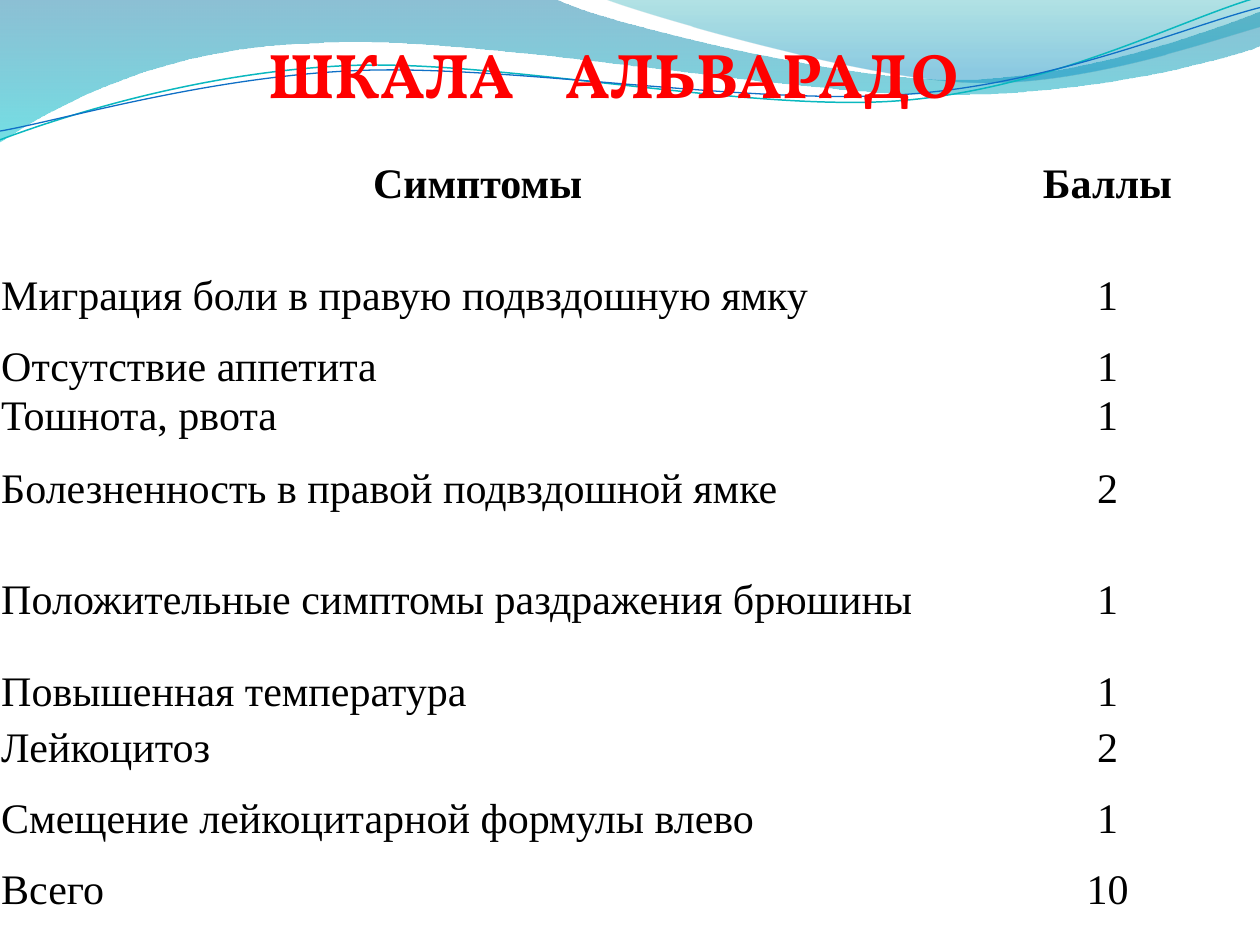
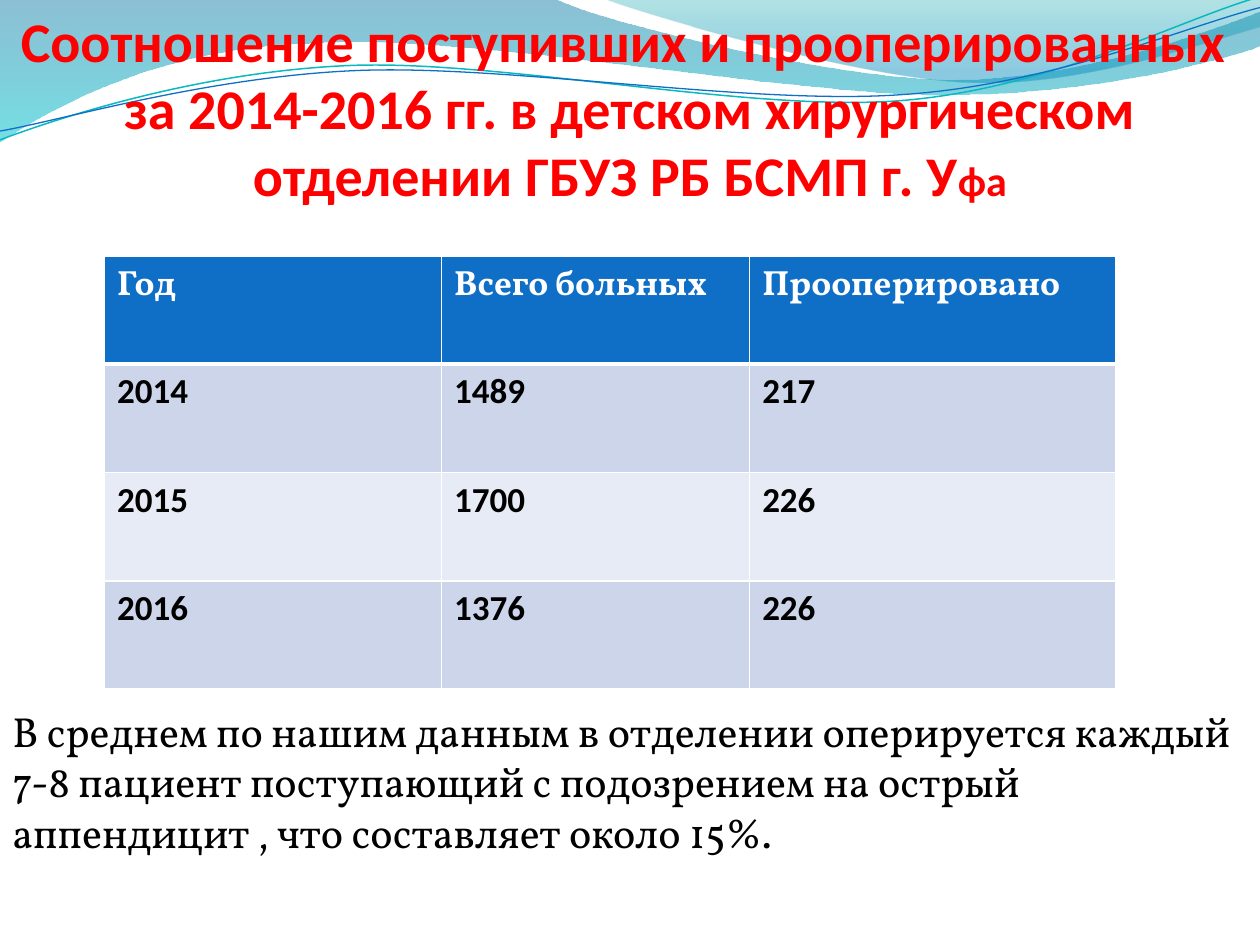
import math
from dataclasses import dataclass
from typing import Optional

import lxml.etree
import pptx
import pptx.dml.color
import pptx.enum.text
import pptx.oxml.ns
import pptx.shapes.autoshape
import pptx.slide
import pptx.table
import pptx.text.text
import pptx.util

# The slide is a grid of 100 columns by 75 rows with square cells
COLUMNS, ROWS = 100, 75
CELL = pptx.util.Inches(0.1)
NO_TABLE_STYLE = "{2D5ABB26-0587-4C30-8999-92F81FD0307C}"

CENTER = pptx.enum.text.PP_ALIGN.CENTER
LEFT = pptx.enum.text.PP_ALIGN.LEFT
TOP = pptx.enum.text.MSO_ANCHOR.TOP
MIDDLE = pptx.enum.text.MSO_ANCHOR.MIDDLE

Point = tuple[float, float]
Segment = tuple[Point, ...]  # one point: a line; three points: a Bezier curve


@dataclass(frozen=True)
class TextStyle:
    font: str
    size: float
    color: str
    bold: bool = False


@dataclass(frozen=True)
class Theme:
    white: str = "FFFFFF"
    blue: str = "0F6FC6"
    teal: str = "0AB8BF"
    bands: tuple[str, str] = ("CCD5EA", "E7EBF5")
    small_size: float = 24
    scale_title: TextStyle = TextStyle("Vollkorn", 36, "FF0000", True)
    ratio_title: TextStyle = TextStyle("Calibri", 32, "FF0000", True)
    body: TextStyle = TextStyle("Vollkorn", 24, "000000")
    scale_head: TextStyle = TextStyle("Times New Roman", 24, "000000", True)
    scale_cell: TextStyle = TextStyle("Times New Roman", 24, "000000")
    ratio_head: TextStyle = TextStyle("Vollkorn", 20, "FFFFFF", True)
    ratio_cell: TextStyle = TextStyle("Calibri", 20, "000000", True)


THEME = Theme()


@dataclass(frozen=True)
class Stop:
    position: float
    color: str
    opacity: int


@dataclass(frozen=True)
class Wave:
    start: Point
    segments: tuple[Segment, ...]
    stops: tuple[Stop, ...] = ()
    line_color: str = ""
    line_width: float = 0
    tilt: float = 0  # clockwise degrees about the pivot
    pivot: Point = (0, 0)


@dataclass(frozen=True)
class Area:
    left: float
    top: float
    width: float
    height: float

    def lengths(self) -> list[int]:
        return [grid(v) for v in (self.left, self.top, self.width, self.height)]


@dataclass(frozen=True)
class TableLook:
    area: Area
    columns: tuple[float, ...]
    rows: tuple[float, ...]
    head: TextStyle
    cell: TextStyle
    margins: Optional[float] = None
    anchor: pptx.enum.text.MSO_ANCHOR = TOP
    centered_head: bool = False
    centered_columns: tuple[int, ...] = ()
    head_fill: str = ""
    band_fills: tuple[str, ...] = ()
    border: str = ""


# Decorative waves at the top of every slide
WAVES = (
    Wave((0, 0), (
        ((44, -0.1),),
        ((47.6, 1.7), (66.4, 6.3), (75.8, 6.3)),
        ((85.3, 6.3), (95.8, 2.6), (100, 0.9)),
        ((100.1, 3.6),),
        ((98.3, 4.4), (87, 7.6), (74.6, 7.5)),
        ((62.2, 7.5), (38.2, 2.8), (25.7, 3.4)),
        ((12.9, 3.6), (4.6, 8.3), (-0.1, 11.3)),
    ), stops=(Stop(0, "0074A1", 45), Stop(1, "00C6CF", 55))),
    Wave((47.9, -0.1), (
        ((50.9, 1.1), (68.2, 6.2), (76.9, 6.5)),
        ((85.6, 6.9), (96.1, 3.2), (100, 2.1)),
        ((100, 0),),
    ), stops=(Stop(0, "00A1A9", 30), Stop(0.8, "008BBF", 45))),
    Wave((0, 11.1), (
        ((4.8, 9.3), (15.8, 5.7), (27.7, 5.2)),
        ((39.5, 4.7), (59.3, 8.9), (71.3, 8)),
        ((83.3, 7.1), (93.8, 1.5), (99.8, -0.2)),
    ), line_color=THEME.teal, line_width=0.85, tilt=-2.7, pivot=(49.9, 5.75)),
    Wave((0, 10.4), (
        ((4.7, 9.6), (16.4, 6.1), (28.3, 5.6)),
        ((40.3, 5.1), (59.7, 8.4), (71.7, 7.5)),
        ((83.6, 6.7), (94.1, 2.1), (100, 0.6)),
    ), line_color=THEME.blue, line_width=0.75, tilt=-2.7, pivot=(49.95, 5.9)),
)

# Table contents
SCALE_ROWS = (
    ("Симптомы", "Баллы"),
    ("Миграция боли в правую подвздошную ямку", "1"),
    ("Отсутствие аппетита", "1"),
    ("Тошнота, рвота", "1"),
    ("Болезненность в правой подвздошной ямке", "2"),
    ("Положительные симптомы раздражения брюшины", "1"),
    ("Повышенная температура", "1"),
    ("Лейкоцитоз", "2"),
    ("Смещение лейкоцитарной формулы влево", "1"),
    ("Всего", "10"),
)
RATIO_ROWS = (
    ("Год", "Всего больных", "Прооперировано"),
    ("2014", "1489", "217"),
    ("2015", "1700", "226"),
    ("2016", "1376", "226"),
)
SCALE_LOOK = TableLook(
    Area(0, 9.4, COLUMNS, 64.4), (75.8, 24.2),
    (10.4, 7.4, 3.6, 3.6, 7.8, 9.74, 4.92, 3.6, 7.4, 3.6),
    THEME.scale_head, THEME.scale_cell, margins=0.1, anchor=MIDDLE,
    centered_head=True, centered_columns=(1,))
RATIO_LOOK = TableLook(
    Area(8.3, 20.3, 80.25, 34.4), (26.75, 24.45, 29.05), (8.6,) * len(RATIO_ROWS),
    THEME.ratio_head, THEME.ratio_cell,
    head_fill=THEME.blue, band_fills=THEME.bands, border=THEME.white)


def grid(cells: float) -> int:
    return round(cells * CELL)


def rgb(color: str) -> pptx.dml.color.RGBColor:
    return pptx.dml.color.RGBColor.from_string(color)


def add_child(parent, tag: str, **attributes: str):
    return lxml.etree.SubElement(parent, pptx.oxml.ns.qn(tag), attributes)


def style_paragraph(paragraph: pptx.text.text._Paragraph, style: TextStyle,
                    alignment: pptx.enum.text.PP_ALIGN = LEFT) -> None:
    paragraph.alignment = alignment
    font = paragraph.font
    font.name, font.bold = style.font, style.bold
    font.size = pptx.util.Pt(style.size)
    font.color.rgb = rgb(style.color)


# Waves
def level(point: Point, wave: Wave) -> tuple[int, int]:
    """Turn a point back by the tilt, which the shape's rotation then restores."""
    angle = math.radians(-wave.tilt)
    x, y = point[0] - wave.pivot[0], point[1] - wave.pivot[1]
    return (grid(wave.pivot[0] + x * math.cos(angle) - y * math.sin(angle)),
            grid(wave.pivot[1] + x * math.sin(angle) + y * math.cos(angle)))


def bend(shape: pptx.shapes.autoshape.Shape, segments: tuple[Segment, ...]) -> None:
    """Join the straight steps of each three-point segment into one Bezier curve."""
    steps = iter(list(shape.element.iter(pptx.oxml.ns.qn("a:lnTo"))))
    for segment in segments:
        group = [next(steps) for _ in segment]
        if len(group) == 1:
            continue
        outline = group[0].getparent()
        curve = add_child(outline, "a:cubicBezTo")
        outline.replace(group[0], curve)
        for step in group:
            curve.append(step[0])
        for step in group[1:]:
            outline.remove(step)


def fill_gradient(shape: pptx.shapes.autoshape.Shape, stops: tuple[Stop, ...]) -> None:
    shape.fill.gradient()
    shape.fill.gradient_angle = 270
    for target, stop in zip(shape.fill.gradient_stops, stops):
        target.position = stop.position
        target.color.rgb = rgb(stop.color)
    colors = shape.element.iter(pptx.oxml.ns.qn("a:srgbClr"))
    for color, stop in zip(list(colors), stops):
        add_child(color, "a:alpha", val=str(stop.opacity * 1000))


def draw_wave(page: pptx.slide.Slide, wave: Wave) -> None:
    builder = page.shapes.build_freeform(*level(wave.start, wave))
    corners = [level(point, wave) for segment in wave.segments for point in segment]
    builder.add_line_segments(corners, close=bool(wave.stops))
    shape = builder.convert_to_shape()
    bend(shape, wave.segments)
    shape.rotation = wave.tilt
    shape.shadow.inherit = False
    if wave.stops:
        fill_gradient(shape, wave.stops)
        shape.line.fill.background()
    else:
        shape.fill.background()
        shape.line.color.rgb = rgb(wave.line_color)
        shape.line.width = pptx.util.Pt(wave.line_width)


def add_page(deck) -> pptx.slide.Slide:
    page = deck.slides.add_slide(deck.slide_layouts[6])
    for wave in WAVES:
        draw_wave(page, wave)
    return page


# Text boxes
def draw_text(page: pptx.slide.Slide, area: Area, lines: tuple[str, ...], style: TextStyle,
              alignment: pptx.enum.text.PP_ALIGN = LEFT) -> pptx.text.text.TextFrame:
    frame = page.shapes.add_textbox(*area.lengths()).text_frame
    frame.word_wrap = True
    frame.text = "\n".join(lines)
    for paragraph in frame.paragraphs:
        style_paragraph(paragraph, style, alignment)
    return frame


# Tables
def draw_borders(cell: pptx.table._Cell, color: str, row: int) -> None:
    heavy_side = {0: "B", 1: "T"}.get(row)
    properties = cell._tc.get_or_add_tcPr()
    for index, side in enumerate("LRTB"):
        width = pptx.util.Pt(3 if side == heavy_side else 1)
        line = add_child(properties, f"a:ln{side}", w=str(width))
        add_child(add_child(line, "a:solidFill"), "a:srgbClr", val=color)
        properties.insert(index, line)


def draw_cell(cell: pptx.table._Cell, text: str, row: int, column: int, look: TableLook) -> None:
    cell.text = text
    cell.vertical_anchor = look.anchor
    if look.margins is not None:
        margin = grid(look.margins)
        cell.margin_left = cell.margin_right = cell.margin_top = cell.margin_bottom = margin
    is_head = row == 0
    centered = column in look.centered_columns or (is_head and look.centered_head)
    style_paragraph(cell.text_frame.paragraphs[0], look.head if is_head else look.cell,
                    CENTER if centered else LEFT)
    if look.band_fills:
        band = look.band_fills[(row - 1) % len(look.band_fills)]
        cell.fill.solid()
        cell.fill.fore_color.rgb = rgb(look.head_fill if is_head else band)
    else:
        cell.fill.background()
    if look.border:
        draw_borders(cell, look.border, row)


def draw_table(page: pptx.slide.Slide, look: TableLook, rows: tuple[tuple[str, ...], ...]) -> None:
    frame = page.shapes.add_table(len(look.rows), len(look.columns), *look.area.lengths())
    table = frame.table
    table.horz_banding = False
    next(frame.element.iter(pptx.oxml.ns.qn("a:tableStyleId"))).text = NO_TABLE_STYLE
    for column, width in zip(table.columns, look.columns):
        column.width = grid(width)
    for row, height in zip(table.rows, look.rows):
        row.height = grid(height)
    for row, texts in enumerate(rows):
        for column, text in enumerate(texts):
            draw_cell(table.cell(row, column), text, row, column, look)


# Slides
def build_scale_page(deck) -> None:
    page = add_page(deck)
    draw_table(page, SCALE_LOOK, SCALE_ROWS)
    title = draw_text(page, Area(20.3, 2.3, 69.5, 7.1), ("ШКАЛА\tАЛЬВАРАДО",), THEME.scale_title)
    properties = title.paragraphs[0]._p.get_or_add_pPr()
    tabs = add_child(properties, "a:tabLst")
    add_child(tabs, "a:tab", pos=str(grid(23.6)), algn="l")
    properties.insert(0, tabs)


def build_ratio_page(deck) -> None:
    page = add_page(deck)
    draw_table(page, RATIO_LOOK, RATIO_ROWS)
    title = draw_text(page, Area(0, 0, COLUMNS, 20.2), (
        "Соотношение поступивших и прооперированных ", " за 2014-2016 гг. в детском хирургическом ",
        "отделении ГБУЗ РБ БСМП г. У"), THEME.ratio_title, CENTER)
    span = title.paragraphs[-1].add_run()
    span.text, span.font.size = "фа", pptx.util.Pt(THEME.small_size)
    draw_text(page, Area(0, 55.5, COLUMNS, 16.2), (
        "В среднем по нашим данным в отделении оперируется каждый 7-8 пациент поступающий "
        "с подозрением на острый аппендицит , что составляет около 15%.",), THEME.body)


def main() -> None:
    deck = pptx.Presentation()
    deck.slide_width, deck.slide_height = grid(COLUMNS), grid(ROWS)
    build_scale_page(deck)
    build_ratio_page(deck)
    deck.save("out.pptx")


main() if __name__ == "__main__" else None
